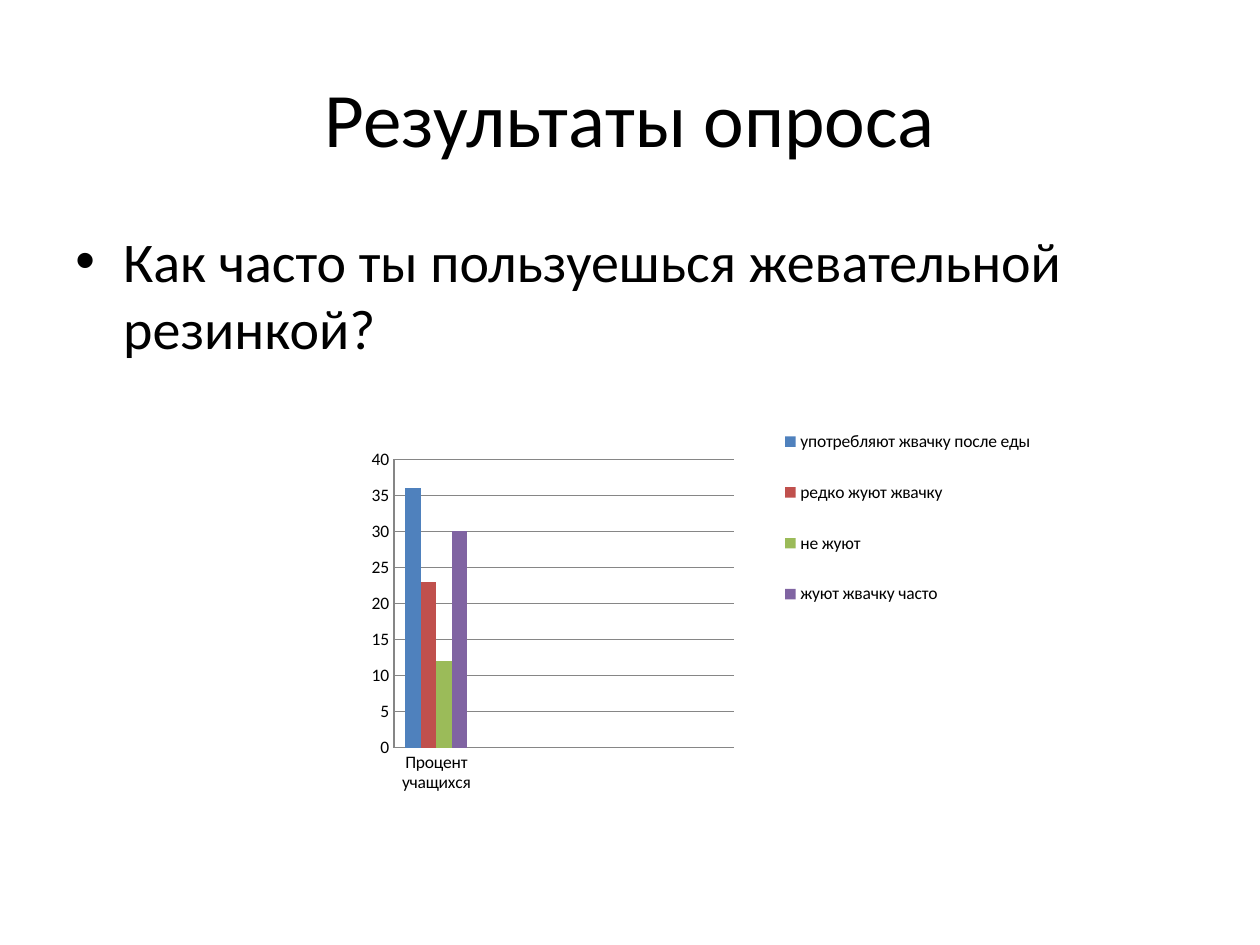
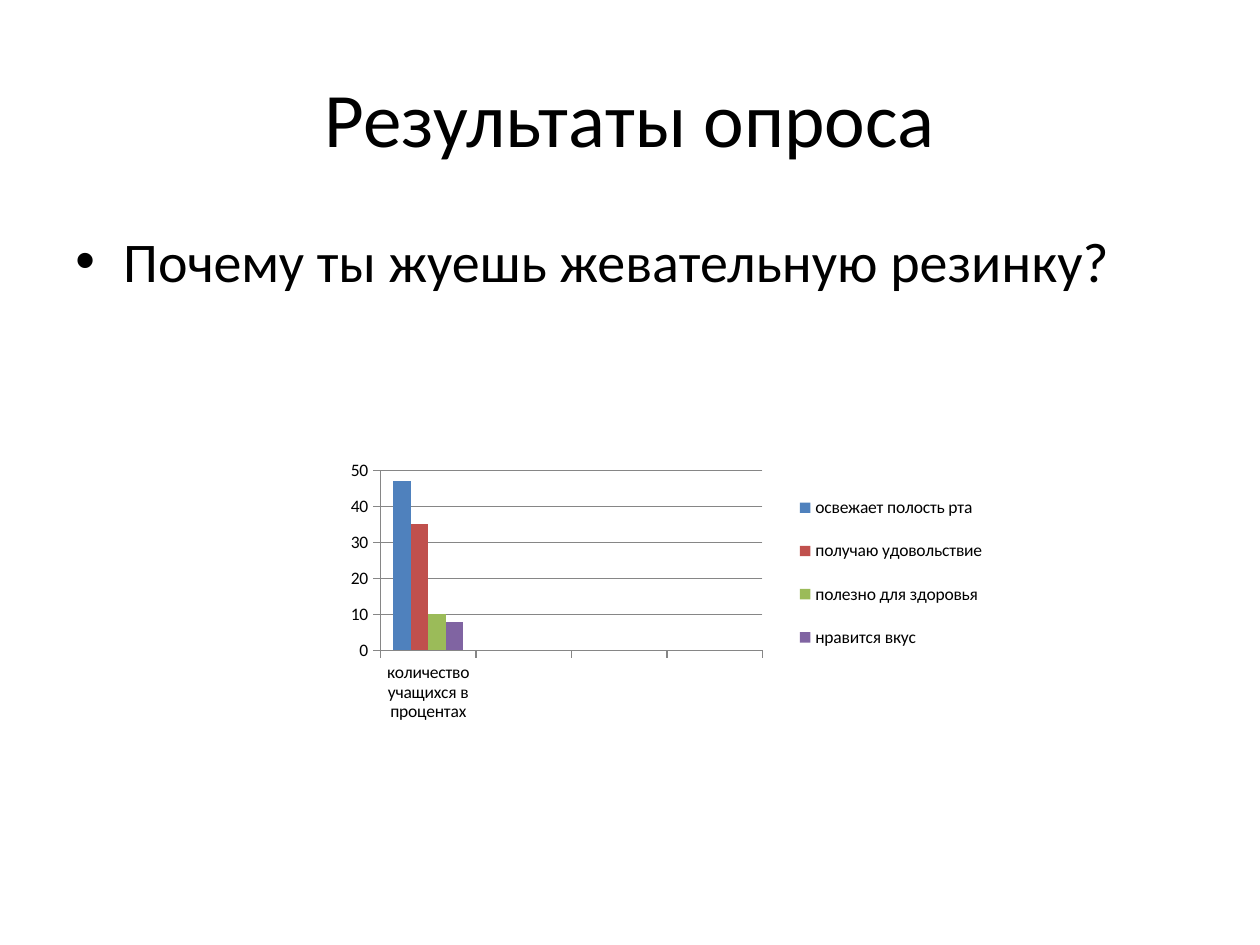
from dataclasses import dataclass

from lxml.etree import SubElement
from pptx import Presentation
from pptx.chart.chart import Chart
from pptx.chart.data import CategoryChartData
from pptx.dml.color import RGBColor
from pptx.enum.chart import XL_CHART_TYPE, XL_LEGEND_POSITION, XL_TICK_MARK
from pptx.enum.text import MSO_ANCHOR, PP_ALIGN
from pptx.oxml import parse_xml
from pptx.oxml.ns import nsdecls, qn
from pptx.presentation import Presentation as Deck
from pptx.slide import Slide
from pptx.text.text import TextFrame
from pptx.util import Inches, Pt

# Shared style
FONT = "Calibri"
BLACK = RGBColor(0x00, 0x00, 0x00)
WHITE = RGBColor(0xFF, 0xFF, 0xFF)
AXIS_GREY = RGBColor(0x86, 0x86, 0x86)
SERIES_COLORS = [
    RGBColor(0x4F, 0x81, 0xBD),
    RGBColor(0xC0, 0x50, 0x4D),
    RGBColor(0x9B, 0xBB, 0x59),
    RGBColor(0x80, 0x64, 0xA2),
]
TITLE = "Результаты опроса"
TITLE_BOX = (0.5, 0.3, 9, 1.25)
QUESTION_BOX = (0.5, 1.75, 9, 4.95)
BULLET_INDENT = Inches(0.38)
EMPTY_CATEGORIES = 3

Box = tuple[float, float, float, float]


@dataclass
class Survey:
    question: str
    category: str
    answers: dict[str, int]
    chart_box: Box  # inches
    plot: Box  # shares of the chart
    legend: Box  # shares of the chart
    tick: XL_TICK_MARK


SURVEYS = [
    Survey(
        "Как часто ты пользуешься жевательной резинкой?",
        "Процент учащихся",
        {
            "употребляют жвачку после еды": 36,
            "редко жуют жвачку": 23,
            "не жуют": 12,
            "жуют жвачку часто": 30,
        },
        (2.42, 2.75, 6.42, 3.58),
        (0.11, 0.25, 0.42, 0.64),
        (0.58, 0.12, 0.33, 0.52),
        XL_TICK_MARK.NONE,
    ),
    Survey(
        "Почему ты жуешь жевательную резинку?",
        "количество учащихся в процентах",
        {
            "освежает полость рта": 47,
            "получаю удовольствие": 35,
            "полезно для здоровья": 10,
            "нравится вкус": 8,
        },
        (2.67, 2.92, 5.83, 3.25),
        (0.06, 0.25, 0.52, 0.44),
        (0.62, 0.26, 0.27, 0.48),
        XL_TICK_MARK.OUTSIDE,
    ),
]


def write(tf: TextFrame, text: str, *, size: float, align: PP_ALIGN,
          anchor: MSO_ANCHOR, bullet: bool = False) -> None:
    tf.word_wrap = True
    tf.vertical_anchor = anchor
    p = tf.paragraphs[0]
    p.alignment = align
    if bullet:
        pPr = p._p.get_or_add_pPr()
        pPr.set("marL", str(BULLET_INDENT))
        pPr.set("indent", str(-BULLET_INDENT))
        SubElement(pPr, qn("a:buFont")).set("typeface", "Arial")
        SubElement(pPr, qn("a:buChar")).set("char", "•")
    r = p.add_run()
    r.text = text
    r.font.name = FONT
    r.font.size = Pt(size)
    r.font.color.rgb = BLACK


def manual_layout(box: Box, inner: bool = False):
    x, y, w, h = box
    target = '<c:layoutTarget val="inner"/>' if inner else ""
    return parse_xml(
        f'<c:layout {nsdecls("c")}><c:manualLayout>{target}'
        '<c:xMode val="edge"/><c:yMode val="edge"/>'
        f'<c:x val="{x}"/><c:y val="{y}"/><c:w val="{w}"/><c:h val="{h}"/>'
        "</c:manualLayout></c:layout>"
    )


def place_parts(chart: Chart, survey: Survey) -> None:
    plot_area = chart._chartSpace.chart.plotArea
    legend = chart.legend._element
    for part in (plot_area, legend):
        for old in part.findall(qn("c:layout")):
            part.remove(old)
    plot_area.insert(0, manual_layout(survey.plot, inner=True))
    legend.find(qn("c:legendPos")).addnext(manual_layout(survey.legend))


def add_survey_chart(s: Slide, survey: Survey) -> None:
    data = CategoryChartData()
    data.categories = [survey.category] + [""] * EMPTY_CATEGORIES
    for answer, share in survey.answers.items():
        data.add_series(answer, [share] + [None] * EMPTY_CATEGORIES)
    chart = s.shapes.add_chart(
        XL_CHART_TYPE.COLUMN_CLUSTERED, *map(Inches, survey.chart_box), data
    ).chart
    chart.has_title = False
    chart.font.name = FONT
    chart.font.size = Pt(10)
    chart.font.color.rgb = BLACK

    # Columns
    plot = chart.plots[0]
    plot.vary_by_categories = False
    plot.gap_width = 150
    plot.overlap = 0
    for series, color in zip(plot.series, SERIES_COLORS):
        series.format.fill.solid()
        series.format.fill.fore_color.rgb = color

    # Axes and gridlines
    value_axis = chart.value_axis
    value_axis.has_major_gridlines = True
    for axis in (chart.category_axis, value_axis):
        axis.major_tick_mark = survey.tick
        axis.minor_tick_mark = XL_TICK_MARK.NONE
    for part in (chart.category_axis, value_axis, value_axis.major_gridlines):
        part.format.line.color.rgb = AXIS_GREY
        part.format.line.width = Pt(0.75)

    # Legend
    chart.has_legend = True
    chart.legend.position = XL_LEGEND_POSITION.RIGHT
    chart.legend.include_in_layout = False
    place_parts(chart, survey)


def add_survey_slide(prs: Deck, survey: Survey) -> None:
    s = prs.slides.add_slide(prs.slide_layouts.get_by_name("Title Only"))
    s.background.fill.solid()
    s.background.fill.fore_color.rgb = WHITE

    title = s.shapes.title
    title.left, title.top, title.width, title.height = map(Inches, TITLE_BOX)
    write(title.text_frame, TITLE, size=44, align=PP_ALIGN.CENTER,
          anchor=MSO_ANCHOR.MIDDLE)

    question = s.shapes.add_textbox(*map(Inches, QUESTION_BOX))
    write(question.text_frame, survey.question, size=32, align=PP_ALIGN.LEFT,
          anchor=MSO_ANCHOR.TOP, bullet=True)

    add_survey_chart(s, survey)


def main() -> None:
    prs = Presentation()
    prs.slide_width, prs.slide_height = Inches(10), Inches(7.5)
    for survey in SURVEYS:
        add_survey_slide(prs, survey)
    prs.save("out.pptx")


if __name__ == "__main__":
    main()
